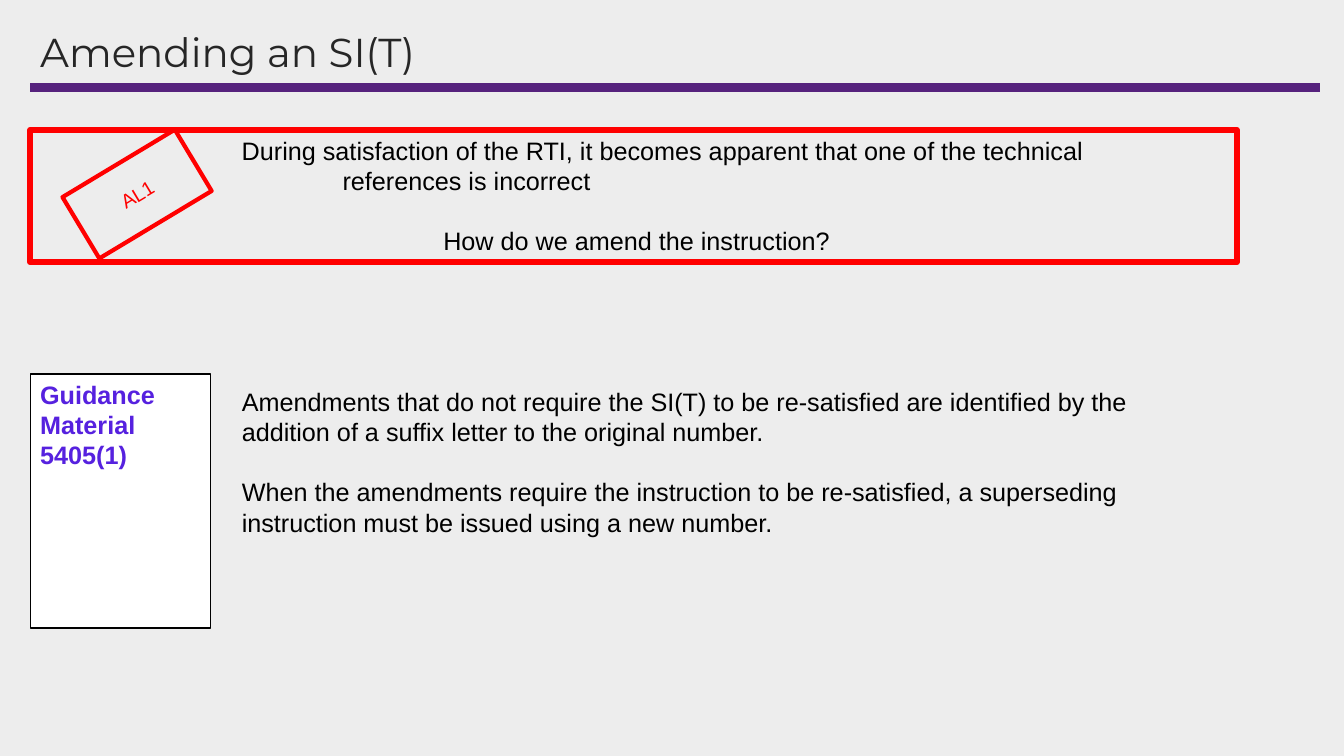
"""Build the slide on amending an SI(T)."""
import pptx
import pptx.dml.color
import pptx.enum.shapes
import pptx.enum.text
import pptx.oxml.ns
import pptx.util
from lxml import etree

Pt = pptx.util.Pt
RGBColor = pptx.dml.color.RGBColor
PP_ALIGN = pptx.enum.text.PP_ALIGN
MSO_ANCHOR = pptx.enum.text.MSO_ANCHOR

BACKGROUND = RGBColor(0xED, 0xED, 0xED)
PURPLE = RGBColor(0x56, 0x22, 0x7D)
VIOLET = RGBColor(0x56, 0x21, 0xDF)
CHARCOAL = RGBColor(0x26, 0x26, 0x26)
RED = RGBColor(0xFF, 0x00, 0x00)
BLACK = RGBColor(0x00, 0x00, 0x00)
WHITE = RGBColor(0xFF, 0xFF, 0xFF)

TITLE = "Amending an SI(T)"
GUIDANCE = "Guidance Material 5405(1)"
STAMP = "AL1"
SCENARIO = [
    "During satisfaction of the RTI, it becomes apparent that one of the technical references is incorrect",
    "How do we amend the instruction?",
]
RULES = [
    "Amendments that do not require the SI(T) to be re-satisfied are identified by the addition of a suffix letter to the original number.",
    "When the amendments require the instruction to be re-satisfied, a superseding instruction must be issued using a new number.",
]

LEFT = 21.6
TITLE_WIDTH = 921.6
RULE_TOP = 62.64
LINE_PITCH = 21.6
TAB = 72
SCENARIO_INDENTS = [(3 * TAB, -TAB), (4 * TAB, 0)]


def write(shape, texts, color, size=18, font="Arial", bold=False, spacing=Pt(LINE_PITCH),
          align=PP_ALIGN.LEFT, anchor=MSO_ANCHOR.TOP):
    frame = shape.text_frame
    frame.word_wrap = True
    frame.vertical_anchor = anchor
    frame.text = "\n".join(texts)
    for index, paragraph in enumerate(frame.paragraphs):
        paragraph.alignment = align
        paragraph.line_spacing = spacing
        if index:
            paragraph.space_before = Pt(LINE_PITCH)
        for run in paragraph.runs:
            run.font.name = font
            run.font.size = Pt(size)
            run.font.bold = bold
            run.font.color.rgb = color


def add_box(slide, bounds, line_color, line_width, fill=None):
    shape = slide.shapes.add_shape(pptx.enum.shapes.MSO_SHAPE.RECTANGLE, *map(Pt, bounds))
    shape.shadow.inherit = False
    if fill is None:
        shape.fill.background()
    else:
        shape.fill.solid()
        shape.fill.fore_color.rgb = fill
    shape.line.color.rgb = line_color
    shape.line.width = Pt(line_width)
    return shape


def main():
    presentation = pptx.Presentation()
    presentation.slide_width, presentation.slide_height = Pt(960), Pt(540)
    slide = presentation.slides.add_slide(presentation.slide_layouts[6])
    slide.background.fill.solid()
    slide.background.fill.fore_color.rgb = BACKGROUND

    title_rule = slide.shapes.add_connector(
        pptx.enum.shapes.MSO_CONNECTOR.STRAIGHT,
        Pt(LEFT), Pt(RULE_TOP), Pt(LEFT + TITLE_WIDTH), Pt(RULE_TOP))
    title_rule.line.color.rgb = PURPLE
    title_rule.line.width = Pt(6)
    etree.SubElement(title_rule._element.spPr, pptx.oxml.ns.qn("a:effectLst"))

    title = slide.shapes.add_textbox(Pt(LEFT), Pt(20.16), Pt(TITLE_WIDTH), Pt(38.16))
    write(title, [TITLE], CHARCOAL, 28.8, "Montserrat", spacing=0.9, anchor=MSO_ANCHOR.MIDDLE)

    guidance = add_box(slide, (LEFT, 267.12, 128.88, 181.44), BLACK, 1, WHITE)
    write(guidance, [GUIDANCE], VIOLET, bold=True)

    scenario = add_box(slide, (LEFT, 92.88, 861.84, 94.32), RED, 4.5)
    write(scenario, SCENARIO, BLACK)
    scenario.text_frame.margin_right = Pt(TAB)
    for paragraph, (margin, indent) in zip(scenario.text_frame.paragraphs, SCENARIO_INDENTS):
        properties = paragraph._p.get_or_add_pPr()
        properties.set("marL", str(Pt(margin)))
        properties.set("indent", str(Pt(indent)))

    stamp = add_box(slide, (51.12, 113.04, 93.6, 51.12), RED, 3)
    stamp.rotation = 329
    write(stamp, [STAMP], RED, 14, spacing=1.0, align=PP_ALIGN.CENTER, anchor=MSO_ANCHOR.MIDDLE)

    rules = slide.shapes.add_textbox(Pt(165.6), Pt(272.16), Pt(709.2), Pt(116.64))
    write(rules, RULES, BLACK)

    presentation.save("out.pptx")


if __name__ == "__main__":
    main()
